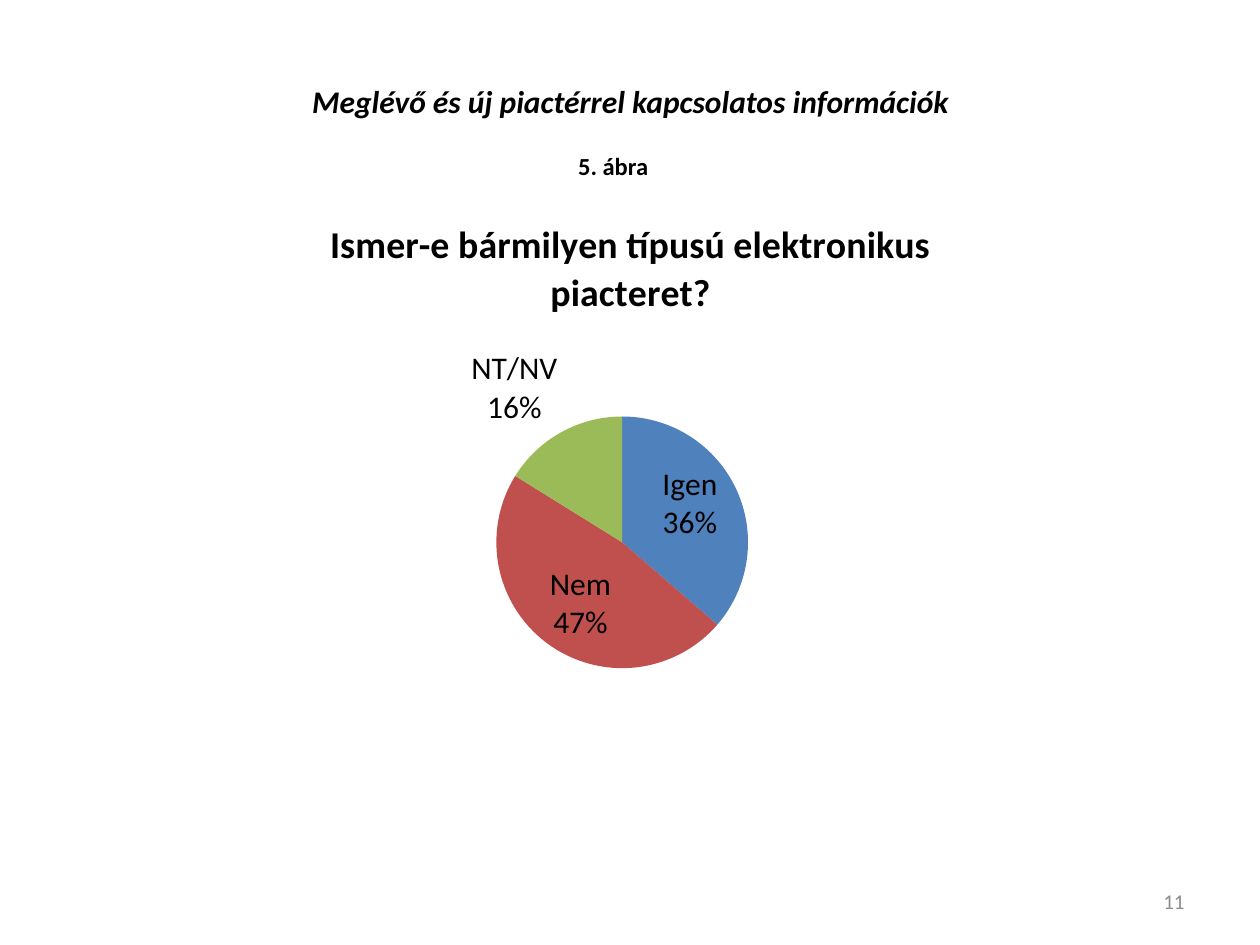
"""Build a survey slide with a heading, a figure caption and a pie chart."""
from dataclasses import dataclass, field

from lxml.etree import SubElement
from pptx import Presentation
from pptx.chart.data import CategoryChartData
from pptx.dml.color import RGBColor
from pptx.enum.chart import XL_CHART_TYPE, XL_LABEL_POSITION
from pptx.enum.text import MSO_ANCHOR, PP_ALIGN
from pptx.oxml.ns import qn
from pptx.util import Inches, Pt

BLACK = RGBColor(0x00, 0x00, 0x00)
GRAY = RGBColor(0x8C, 0x8C, 0x8C)
BLUE = RGBColor(0x4F, 0x81, 0xBD)
RED = RGBColor(0xC0, 0x50, 0x4D)
GREEN = RGBColor(0x9B, 0xBB, 0x59)
QUESTION = "Ismer-e bármilyen típusú elektronikus piacteret?"


@dataclass
class Label:
    text: str
    box: tuple[float, float, float, float]
    align: PP_ALIGN
    anchor: MSO_ANCHOR = MSO_ANCHOR.TOP
    color: RGBColor = BLACK
    font: dict = field(default_factory=dict)


@dataclass
class Slice:
    name: str
    value: int
    color: RGBColor


HEADING = Label("Meglévő és új piactérrel kapcsolatos információk", (0.87, 0.6, 8.27, 0.4),
                PP_ALIGN.CENTER, font={"size": Pt(18), "bold": True, "italic": True})
CAPTION = Label("5. ábra", (4.49, 1.15, 1.02, 0.34), PP_ALIGN.LEFT,
                font={"size": Pt(14), "bold": True})
NUMBER = Label("11", (7.17, 6.95, 2.33, 0.4), PP_ALIGN.RIGHT, MSO_ANCHOR.MIDDLE, GRAY,
               {"size": Pt(12)})
SLICES = [Slice("Igen", 36, BLUE), Slice("Nem", 47, RED), Slice("NT/NV", 16, GREEN)]


def set_font(font, color: RGBColor, values: dict) -> None:
    for name, value in {"name": "Calibri", **values}.items():
        setattr(font, name, value)
    font.color.rgb = color


def fill_label(sp, label: Label) -> None:
    sp.left, sp.top, sp.width, sp.height = map(Inches, label.box)
    tf = sp.text_frame
    tf.word_wrap = True
    tf.vertical_anchor = label.anchor
    p = tf.paragraphs[0]
    p.alignment = label.align
    r = p.add_run()
    r.text = label.text
    set_font(r.font, label.color, label.font)


def place_plot(chart, layout: dict[str, float]) -> None:
    plot_area = chart.plots[0]._element.getparent()
    for old in plot_area.findall(qn("c:layout")):
        plot_area.remove(old)
    outer = SubElement(plot_area, qn("c:layout"))
    plot_area.insert(0, outer)
    manual = SubElement(outer, qn("c:manualLayout"))
    values = {"layoutTarget": "inner", "xMode": "edge", "yMode": "edge", **layout}
    for name, value in values.items():
        SubElement(manual, qn(f"c:{name}")).set("val", str(value))


def add_pie(s, slices: list[Slice], box: tuple[float, float, float, float]) -> None:
    data = CategoryChartData()
    data.categories = [item.name for item in slices]
    data.add_series(QUESTION, [item.value for item in slices])
    chart = s.shapes.add_chart(XL_CHART_TYPE.PIE, *map(Inches, box), data).chart
    set_font(chart.font, BLACK, {"size": Pt(18)})
    chart.has_legend = False
    chart.has_title = True
    r = chart.chart_title.text_frame.paragraphs[0].add_run()
    r.text = QUESTION
    set_font(r.font, BLACK, {"size": Pt(21.6), "bold": True})
    place_plot(chart, {"x": 0.34, "y": 0.4, "w": 0.3, "h": 0.45})
    plot = chart.plots[0]
    plot.vary_by_categories = True
    for i, item in enumerate(slices):
        fill = plot.series[0].points[i].format.fill
        fill.solid()
        fill.fore_color.rgb = item.color
    labels = plot.series[0].data_labels
    set_font(labels.font, BLACK, {"size": Pt(18)})
    values = {"show_category_name": True, "show_percentage": True, "show_value": False,
              "position": XL_LABEL_POSITION.BEST_FIT}
    for name, value in values.items():
        setattr(labels, name, value)
    separator = SubElement(labels._element, qn("c:separator"))
    separator.text = "\n"
    labels._element.find(qn("c:showBubbleSize")).addnext(separator)


def main() -> None:
    prs = Presentation()
    prs.slide_width, prs.slide_height = Inches(10), Inches(7.5)
    s = prs.slides.add_slide(prs.slide_layouts[5])
    fill_label(s.shapes.title, HEADING)
    add_pie(s, SLICES, (1.67, 1.53, 6.67, 4.44))
    for label in (CAPTION, NUMBER):
        fill_label(s.shapes.add_textbox(0, 0, 0, 0), label)
    prs.save("out.pptx")


if __name__ == "__main__":
    main()
